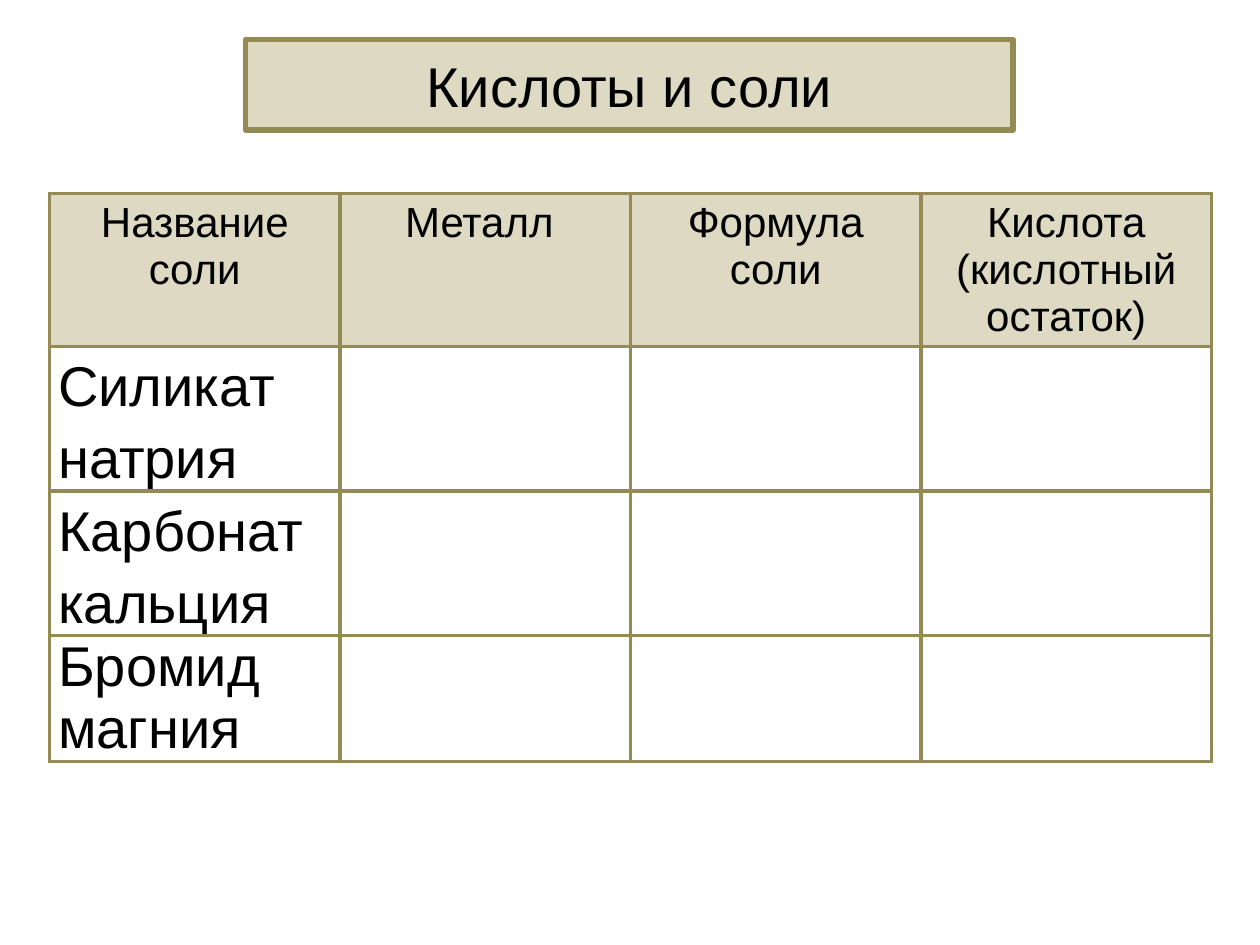
from lxml.etree import SubElement
from pptx import Presentation
from pptx.dml.color import RGBColor
from pptx.enum.shapes import MSO_SHAPE as Shape
from pptx.enum.text import MSO_ANCHOR as Anchor, PP_ALIGN as Align
from pptx.oxml.ns import qn
from pptx.util import Pt

COLORS = {"sand": "DDD9C3", "olive": "948A54", "black": "000000"}
HEADERS = ["Название соли", "Металл ", "Формула соли", "Кислота (кислотный остаток)"]
SALTS = [
    ("Силикат натрия", Align.LEFT, 1.15),
    ("Карбонат кальция", Align.JUSTIFY, 1.15),
    ("Бромид магния", Align.LEFT, 1),
]
ROW_HEIGHTS = [87.4, 82.3, 82.3, 72]
COLUMN_WIDTH = 166


def color(name):
    return RGBColor.from_string(COLORS[name])


def write_text(frame, text, size=32, align=Align.CENTER, spacing=None):
    frame.word_wrap = True
    paragraph = frame.paragraphs[0]
    paragraph.alignment = align
    paragraph.line_spacing = spacing
    run = paragraph.add_run()
    run.text = text
    run.font.name = "Arial"
    run.font.size = Pt(size)
    run.font.bold = False
    run.font.color.rgb = color("black")


def add_title(slide, text):
    shape = slide.shapes.add_shape(
        Shape.ROUNDED_RECTANGLE, Pt(140.4), Pt(22.5), Pt(438.5), Pt(51.8)
    )
    shape.adjustments[0] = 0
    shape.shadow.inherit = False
    shape.fill.solid()
    shape.fill.fore_color.rgb = color("sand")
    shape.line.color.rgb = color("olive")
    shape.line.width = Pt(3)
    shape.text_frame.vertical_anchor = Anchor.MIDDLE
    write_text(shape.text_frame, text)


def add_borders(cell, width=2.25):
    properties = cell._tc.get_or_add_tcPr()
    for side in ("lnL", "lnR", "lnT", "lnB"):
        line = SubElement(properties, qn(f"a:{side}"), w=str(Pt(width)))
        fill = SubElement(line, qn("a:solidFill"))
        SubElement(fill, qn("a:srgbClr"), val=COLORS["olive"])


def add_salt_table(slide):
    table = slide.shapes.add_table(
        len(ROW_HEIGHTS), len(HEADERS), Pt(28.3), Pt(110.5),
        Pt(COLUMN_WIDTH * len(HEADERS)), Pt(sum(ROW_HEIGHTS)),
    ).table
    table.first_row = table.horz_banding = False
    for row, height in zip(table.rows, ROW_HEIGHTS):
        row.height = Pt(height)
    for cell in table.iter_cells():
        add_borders(cell)
        cell.fill.background()
    for column, header in enumerate(HEADERS):
        cell = table.cell(0, column)
        cell.fill.solid()
        cell.fill.fore_color.rgb = color("sand")
        write_text(cell.text_frame, header, size=24)
    for row, (salt, align, spacing) in enumerate(SALTS, start=1):
        cell = table.cell(row, 0)
        cell.margin_left = cell.margin_right = Pt(5)
        cell.margin_top = cell.margin_bottom = Pt(0)
        write_text(cell.text_frame, salt, align=align, spacing=spacing)


def main():
    """Build the slide about acids and salts."""
    presentation = Presentation()
    presentation.slide_width, presentation.slide_height = Pt(720), Pt(540)
    slide = presentation.slides.add_slide(presentation.slide_layouts[6])
    add_title(slide, "Кислоты и соли")
    add_salt_table(slide)
    presentation.save("out.pptx")


if __name__ == "__main__":
    main()
